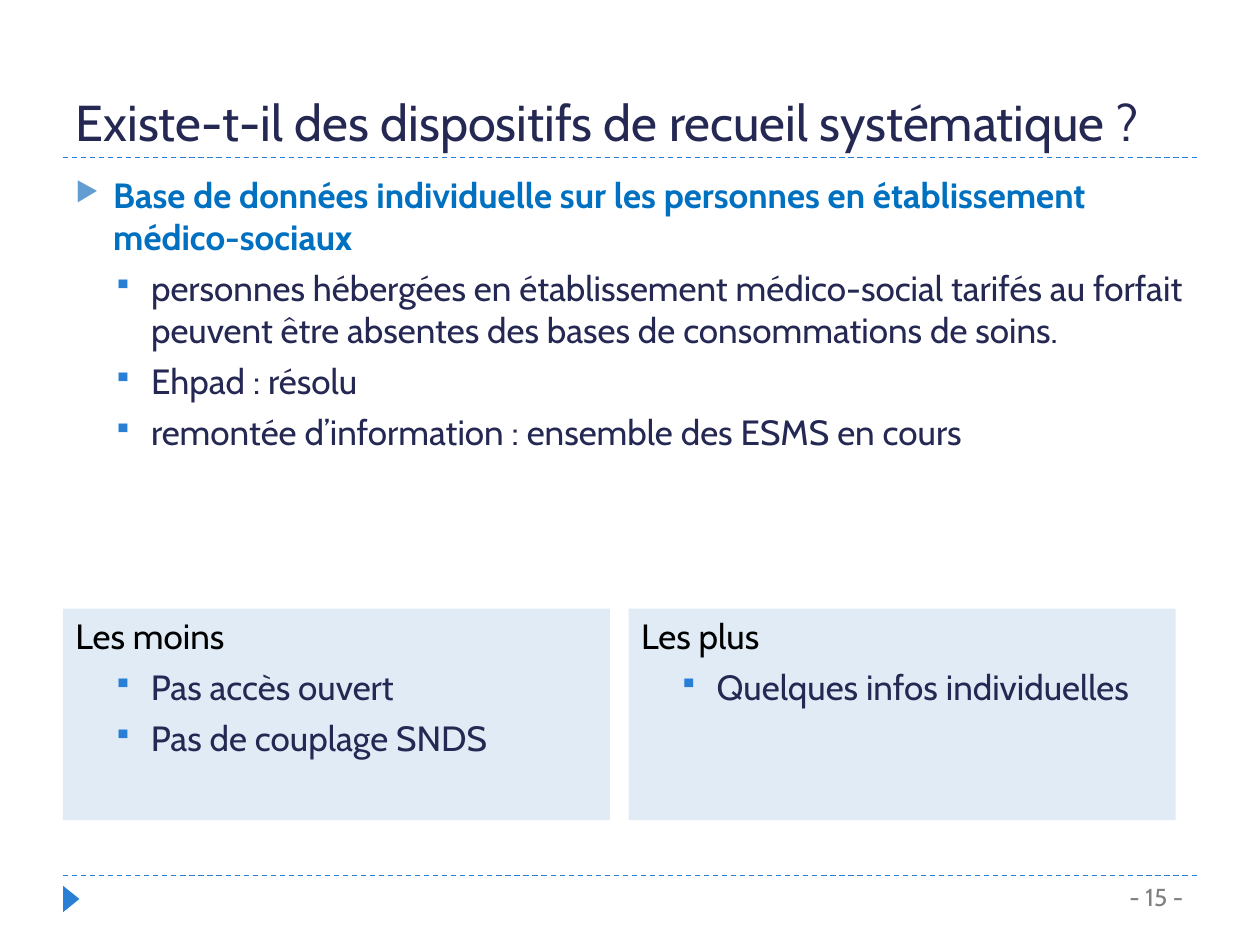
from lxml.etree import SubElement
from pptx import Presentation
from pptx.dml.color import RGBColor
from pptx.enum.dml import MSO_LINE
from pptx.enum.shapes import MSO_CONNECTOR, MSO_SHAPE
from pptx.enum.text import MSO_ANCHOR, MSO_AUTO_SIZE, PP_ALIGN
from pptx.oxml.ns import qn
from pptx.util import Inches, Pt

NAVY = RGBColor(0x24, 0x28, 0x52)
BLUE = RGBColor(0x29, 0x7F, 0xD5)
LIGHT_BLUE = RGBColor(0x62, 0x9D, 0xD1)
STRONG_BLUE = RGBColor(0x00, 0x70, 0xC0)
PALE_BLUE = RGBColor(0xE0, 0xEB, 0xF6)
GREY = RGBColor(0x80, 0x80, 0x80)
BLACK = RGBColor(0, 0, 0)

LEFT = 0.5
PANEL_TOP, PANEL_WIDTH, PANEL_HEIGHT, PANEL_GAP = 4.83, 4.34, 1.68, 0.15

HEADING = {"color": STRONG_BLUE, "bold": True, "before": 6,
           "bullet": ("▶", LIGHT_BLUE), "indent": 0.3}
POINT = {"color": NAVY, "before": 5, "level": 1,
         "bullet": ("▪", BLUE), "indent": 0.6}
PANEL_HEADING = {"color": BLACK, "before": 6}

FINDINGS = [
    ("Base de données individuelle sur les personnes en établissement médico-sociaux", HEADING),
    ("personnes hébergées en établissement médico-social tarifés au forfait "
     "peuvent être absentes des bases de consommations de soins.", POINT),
    ("Ehpad : résolu", POINT),
    ("remontée d’information : ensemble des ESMS en cours", POINT),
]
PANELS = {
    "Les moins": ["Pas accès ouvert", "Pas de couplage SNDS"],
    "Les plus": ["Quelques infos individuelles"],
}


class SlideBuilder:
    font_name = "Cabin"
    text_size = 20
    hanging = 0.3
    bullet_scale = "76000"

    def __init__(self, slide):
        self.slide = slide

    def title(self, wording, *box):
        heading = self.slide.shapes.title
        for side, length in zip(("left", "top", "width", "height"), box):
            setattr(heading, side, Inches(length))
        self.fill_text(heading.text_frame, [(wording, {"color": NAVY, "size": 28.8})],
                       MSO_ANCHOR.BOTTOM)

    def text(self, lines, *box):
        area = self.slide.shapes.add_textbox(*map(Inches, box))
        self.fill_text(area.text_frame, lines)

    def shape(self, kind, color, *box, rotation=0, lines=()):
        block = self.slide.shapes.add_shape(kind, *map(Inches, box))
        block.shadow.inherit = False
        block.fill.solid()
        block.fill.fore_color.rgb = color
        block.line.fill.background()
        block.rotation = rotation
        if lines:
            self.fill_text(block.text_frame, lines)

    def rule(self, y):
        separator = self.slide.shapes.add_connector(
            MSO_CONNECTOR.STRAIGHT, Inches(LEFT), Inches(y), Inches(9.5), Inches(y))
        style = {"width": Pt(0.75), "dash_style": MSO_LINE.DASH}
        for name, value in style.items():
            setattr(separator.line, name, value)
        separator.line.color.rgb = BLUE
        SubElement(separator._element.spPr, qn("a:effectLst"))

    def fill_text(self, frame, lines, anchor=MSO_ANCHOR.TOP):
        layout = {"word_wrap": True, "auto_size": MSO_AUTO_SIZE.NONE,
                  "vertical_anchor": anchor}
        for name, value in layout.items():
            setattr(frame, name, value)
        for index, (wording, style) in enumerate(lines):
            paragraph = frame.add_paragraph() if index else frame.paragraphs[0]
            spacing = {"alignment": style.get("align", PP_ALIGN.LEFT),
                       "level": style.get("level", 0),
                       "space_before": Pt(style.get("before", 0))}
            for name, value in spacing.items():
                setattr(paragraph, name, value)
            run = paragraph.add_run()
            run.text = wording
            lettering = {"name": self.font_name, "bold": style.get("bold", False),
                         "size": Pt(style.get("size", self.text_size))}
            for name, value in lettering.items():
                setattr(run.font, name, value)
            run.font.color.rgb = style["color"]
            if "bullet" in style:
                self.bullet(paragraph, style["indent"], *style["bullet"])

    def bullet(self, paragraph, indent, mark, color):
        properties = paragraph._p.get_or_add_pPr()
        properties.set("marL", str(Inches(indent)))
        properties.set("indent", str(-Inches(self.hanging)))
        tint = SubElement(properties, qn("a:buClr"))
        SubElement(tint, qn("a:srgbClr"), val=str(color))
        SubElement(properties, qn("a:buSzPct"), val=self.bullet_scale)
        SubElement(properties, qn("a:buChar"), char=mark)


def main():
    deck = Presentation()
    deck.slide_width, deck.slide_height = Inches(10), Inches(7.5)
    builder = SlideBuilder(deck.slides.add_slide(deck.slide_layouts[5]))

    for y in (6.95, 1.25):
        builder.rule(y)
    builder.shape(MSO_SHAPE.ISOSCELES_TRIANGLE, BLUE, 0.46, 7.07, 0.21, 0.13, rotation=90)
    builder.title("Existe-t-il des dispositifs de recueil systématique ?", LEFT, 0.17, 9, 1.08)
    page_style = {"color": GREY, "size": 14, "align": PP_ALIGN.RIGHT}
    builder.text([("- 15 -", page_style)], 3.17, 6.95, 6.32, 0.4)
    builder.text(FINDINGS, LEFT, 1.33, 8.99, 3.36)

    for column, (heading, points) in enumerate(PANELS.items()):
        lines = [(heading, PANEL_HEADING)] + [(point, POINT) for point in points]
        builder.shape(MSO_SHAPE.RECTANGLE, PALE_BLUE,
                      LEFT + column * (PANEL_WIDTH + PANEL_GAP), PANEL_TOP,
                      PANEL_WIDTH, PANEL_HEIGHT, lines=lines)

    deck.save("out.pptx")


if __name__ == "__main__":
    main()
